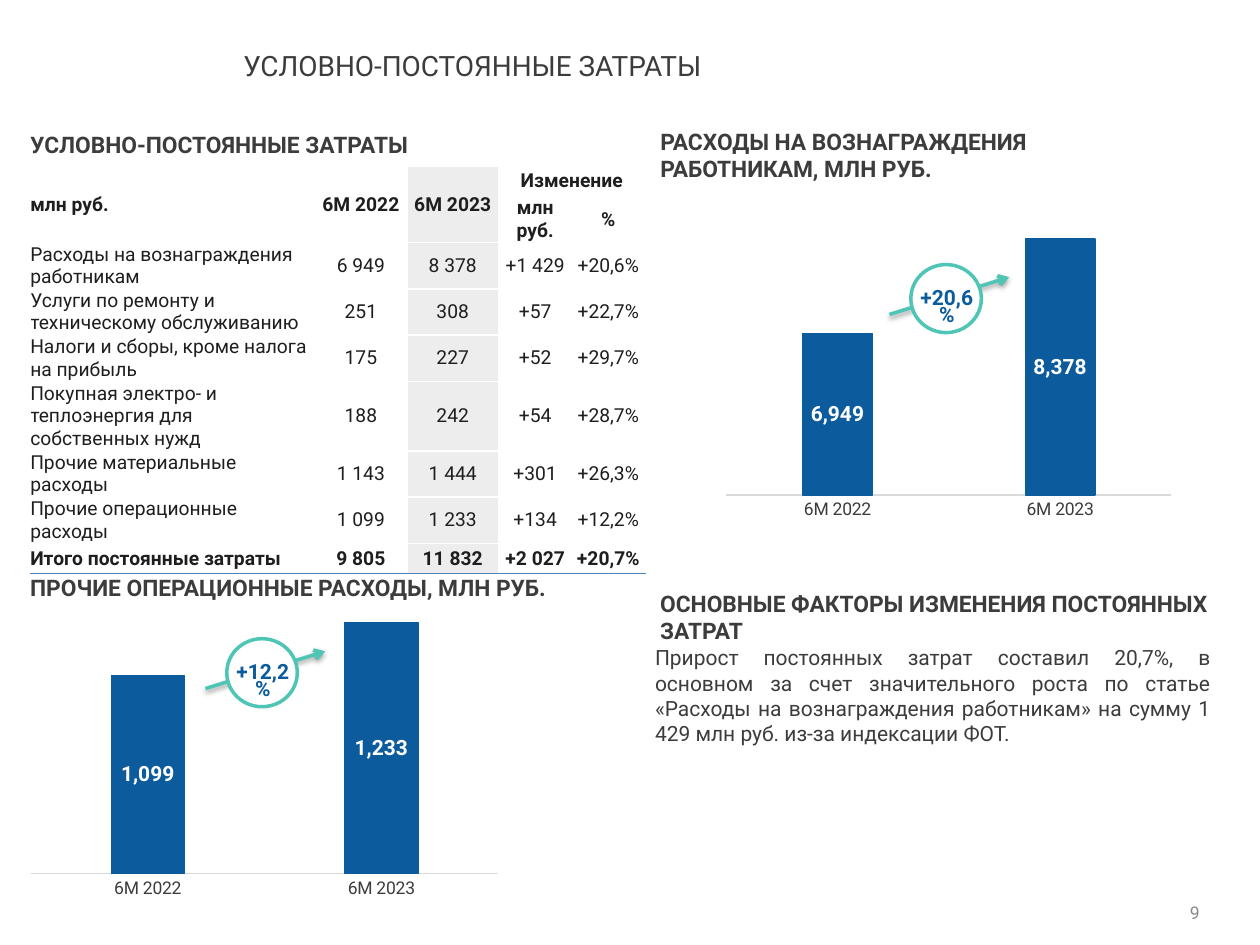
from lxml import etree
from pptx import Presentation
from pptx.chart import data
from pptx.dml import color
from pptx.enum import chart as chart_enum, shapes, text
from pptx.oxml import ns
from pptx.util import Pt

FONT = "Roboto"
BLUE = color.RGBColor(0x0C, 0x5B, 0x9D)
TEAL = color.RGBColor(0x4F, 0xC5, 0xB5)
DARK = color.RGBColor(0x3C, 0x3C, 0x3C)
TABLE_TEXT = color.RGBColor(0x1E, 0x1E, 0x1E)
GRAY = color.RGBColor(0x8A, 0x8A, 0x8A)
AXIS = color.RGBColor(0xD9, 0xD9, 0xD9)
BAND = color.RGBColor(0xED, 0xED, 0xED)
RULE = color.RGBColor(0x4F, 0x81, 0xBD)
WHITE = color.RGBColor(0xFF, 0xFF, 0xFF)

LEFT, CENTER, RIGHT, JUSTIFY = (
    text.PP_ALIGN.LEFT, text.PP_ALIGN.CENTER, text.PP_ALIGN.RIGHT, text.PP_ALIGN.JUSTIFY)
TOP, MIDDLE = text.MSO_ANCHOR.TOP, text.MSO_ANCHOR.MIDDLE

PERIODS = ["6М 2022", "6М 2023"]
COLUMN_WIDTHS = [162.7, 52.5, 52.5, 41.8, 41.8]
HEADER = [
    ["млн руб.", *PERIODS, "Изменение", ""],
    ["", "", "", "млн руб.", "%"],
]
COSTS = [
    ["Расходы на вознаграждения работникам", "6 949", "8 378", "+1 429", "+20,6%"],
    ["Услуги по ремонту и техническому обслуживанию", "251", "308", "+57", "+22,7%"],
    ["Налоги и сборы, кроме налога на прибыль", "175", "227", "+52", "+29,7%"],
    ["Покупная электро- и теплоэнергия для собственных нужд",
     "188", "242", "+54", "+28,7%"],
    ["Прочие материальные расходы", "1 143", "1 444", "+301", "+26,3%"],
    ["Прочие операционные расходы", "1 099", "1 233", "+134", "+12,2%"],
    ["Итого постоянные затраты", "9 805", "11 832", "+2 027", "+20,7%"],
]


def format_font(font, size, rgb, bold=False):
    font.name, font.size, font.bold = FONT, Pt(size), bold
    font.color.rgb = rgb


def write(frame, words, size=13, rgb=DARK, bold=False, align=LEFT, spacing=None):
    paragraph = frame.paragraphs[0]
    paragraph.alignment = align
    if spacing:
        paragraph.line_spacing = spacing
    run = paragraph.add_run()
    run.text = words
    format_font(run.font, size, rgb, bold)


def add_text(container, box, words, anchor=TOP, inset=(0, 0), **style):
    """Add a wrapped text box; inset is (horizontal, vertical) in points."""
    frame = container.add_textbox(*map(Pt, box)).text_frame
    frame.word_wrap = True
    frame.vertical_anchor = anchor
    frame.margin_left = frame.margin_right = Pt(inset[0])
    frame.margin_top = frame.margin_bottom = Pt(inset[1])
    write(frame, words, **style)


def add_heading(slide, box, words):
    add_text(slide.shapes, box, words, bold=True)


def add_xml(parent, tag, **attributes):
    return etree.SubElement(parent, ns.qn(tag), attributes)


def add_rule_below(cell):
    """Draw the bottom border; it must precede the fill in the cell properties."""
    line = add_xml(cell._tc.get_or_add_tcPr(), "a:lnB", w=str(Pt(1)))
    add_xml(add_xml(line, "a:solidFill"), "a:srgbClr", val=str(RULE))


def add_cost_table(slide, box):
    rows = HEADER + COSTS
    table = slide.shapes.add_table(len(rows), len(COLUMN_WIDTHS), *map(Pt, box)).table
    table.first_row = table.horz_banding = False
    for column, width in zip(table.columns, COLUMN_WIDTHS):
        column.width = Pt(width)
    for row in table.rows:
        row.height = Pt(17.2)
    for column in range(3):
        table.cell(0, column).merge(table.cell(1, column))
    table.cell(0, 3).merge(table.cell(0, 4))

    for r, row in enumerate(rows):
        for c, words in enumerate(row):
            cell = table.cell(r, c)
            cell.margin_left = cell.margin_right = cell.margin_top = cell.margin_bottom = 0
            cell.vertical_anchor = MIDDLE
            if r > 0 or c < 3:
                add_rule_below(cell)
            if c == 2:
                cell.fill.solid()
                cell.fill.fore_color.rgb = BAND
            else:
                cell.fill.background()
            if words:
                write(cell.text_frame, words, size=11, rgb=TABLE_TEXT,
                      bold=r < len(HEADER) or r == len(rows) - 1,
                      align=CENTER if c else LEFT)


def add_cost_chart(slide, box, values, minimum, maximum):
    chart_data = data.CategoryChartData(number_format="#,##0")
    chart_data.categories = PERIODS
    chart_data.add_series("Series 1", values)
    chart = slide.shapes.add_chart(
        chart_enum.XL_CHART_TYPE.COLUMN_CLUSTERED, *map(Pt, box), chart_data).chart
    chart.has_legend = chart.has_title = False
    format_font(chart.font, 10, DARK)

    value_axis = chart.value_axis
    value_axis.minimum_scale, value_axis.maximum_scale = minimum, maximum
    value_axis.has_major_gridlines = value_axis.visible = False
    category_axis = chart.category_axis
    category_axis.major_tick_mark = chart_enum.XL_TICK_MARK.NONE
    category_axis.format.line.color.rgb = AXIS
    category_axis.format.line.width = Pt(0.75)

    plot = chart.plots[0]
    plot.gap_width = 219
    plot.vary_by_categories = False
    series = plot.series[0]
    series.format.fill.solid()
    series.format.fill.fore_color.rgb = BLUE
    series.format.line.color.rgb = BLUE
    series.format.line.width = Pt(0.75)
    plot.has_data_labels = True
    labels = plot.data_labels
    labels.show_value = True
    labels.number_format, labels.number_format_is_linked = "#,##0", False
    labels.position = chart_enum.XL_LABEL_POSITION.CENTER
    format_font(labels.font, 12, WHITE, bold=True)


def add_growth_badge(slide, left, top, words):
    """Group a rising arrow, a circle over it and the growth rate."""
    group = slide.shapes.add_group_shape().shapes
    arrow = group.add_connector(
        shapes.MSO_CONNECTOR.STRAIGHT,
        Pt(left), Pt(top + 28.5), Pt(left + 68.4), Pt(top + 7.2))
    arrow.line.color.rgb = TEAL
    arrow.line.width = Pt(2)
    add_xml(arrow.line._get_or_add_ln(), "a:tailEnd", type="arrow")
    effects = add_xml(arrow._element.spPr, "a:effectLst")
    shadow = add_xml(effects, "a:outerShdw", blurRad=str(Pt(3.1)), dist=str(Pt(1.6)),
                     dir="5400000", rotWithShape="0")
    add_xml(add_xml(shadow, "a:srgbClr", val="000000"), "a:alpha", val="38000")

    circle = group.add_shape(
        shapes.MSO_SHAPE.OVAL, Pt(left + 12.2), Pt(top), Pt(40.3), Pt(38.9))
    circle.shadow.inherit = False
    circle.fill.solid()
    circle.fill.fore_color.rgb = WHITE
    circle.line.color.rgb = TEAL
    circle.line.width = Pt(2)
    add_text(group, (left + 7.2, top + 11.5, 51.1, 18), words, inset=(7.2, 3.6),
             size=12, rgb=BLUE, bold=True, align=CENTER, spacing=0.7)


def build_slide(presentation):
    slide = presentation.slides.add_slide(presentation.slide_layouts[6])
    add_text(slide.shapes, (139, 30.2, 547, 33.8), "УСЛОВНО-ПОСТОЯННЫЕ ЗАТРАТЫ",
             size=16, spacing=0.9)

    add_heading(slide, (17.3, 74.9, 307.4, 19.4), "УСЛОВНО-ПОСТОЯННЫЕ ЗАТРАТЫ")
    add_cost_table(slide, (17.3, 95, 351.3, 154.8))

    add_heading(slide, (377.3, 72.7, 288.7, 42.5),
                "РАСХОДЫ НА ВОЗНАГРАЖДЕНИЯ РАБОТНИКАМ, МЛН РУБ.")
    add_cost_chart(slide, (409.7, 109.4, 265, 191.5), [6949, 8378], 4500, 9000)
    add_growth_badge(slide, 508.3, 151.2, "+20,6%")

    add_heading(slide, (17.3, 327.6, 307.4, 42.5), "ПРОЧИЕ ОПЕРАЦИОННЫЕ РАСХОДЫ, МЛН РУБ.")
    add_cost_chart(slide, (12.2, 337, 278, 180), [1099, 1233], 600, 1300)
    add_growth_badge(slide, 117.4, 365, "+12,2%")

    add_heading(slide, (377.3, 337, 331.2, 30),
                "ОСНОВНЫЕ ФАКТОРЫ ИЗМЕНЕНИЯ ПОСТОЯННЫХ ЗАТРАТ")
    add_text(slide.shapes, (367.2, 365, 331.9, 65),
             "Прирост постоянных затрат составил 20,7%, в основном за счет значительного "
             "роста по статье «Расходы на вознаграждения работникам» на сумму 1 429 млн руб. "
             "из-за индексации ФОТ.",
             inset=(7.2, 3.6), size=12, align=JUSTIFY)
    add_text(slide.shapes, (654.5, 514.8, 31, 13), "9", anchor=MIDDLE,
             size=10, rgb=GRAY, align=RIGHT)


def main():
    presentation = Presentation()
    presentation.slide_width, presentation.slide_height = Pt(720), Pt(540)
    build_slide(presentation)
    presentation.save("out.pptx")


if __name__ == "__main__":
    main()
